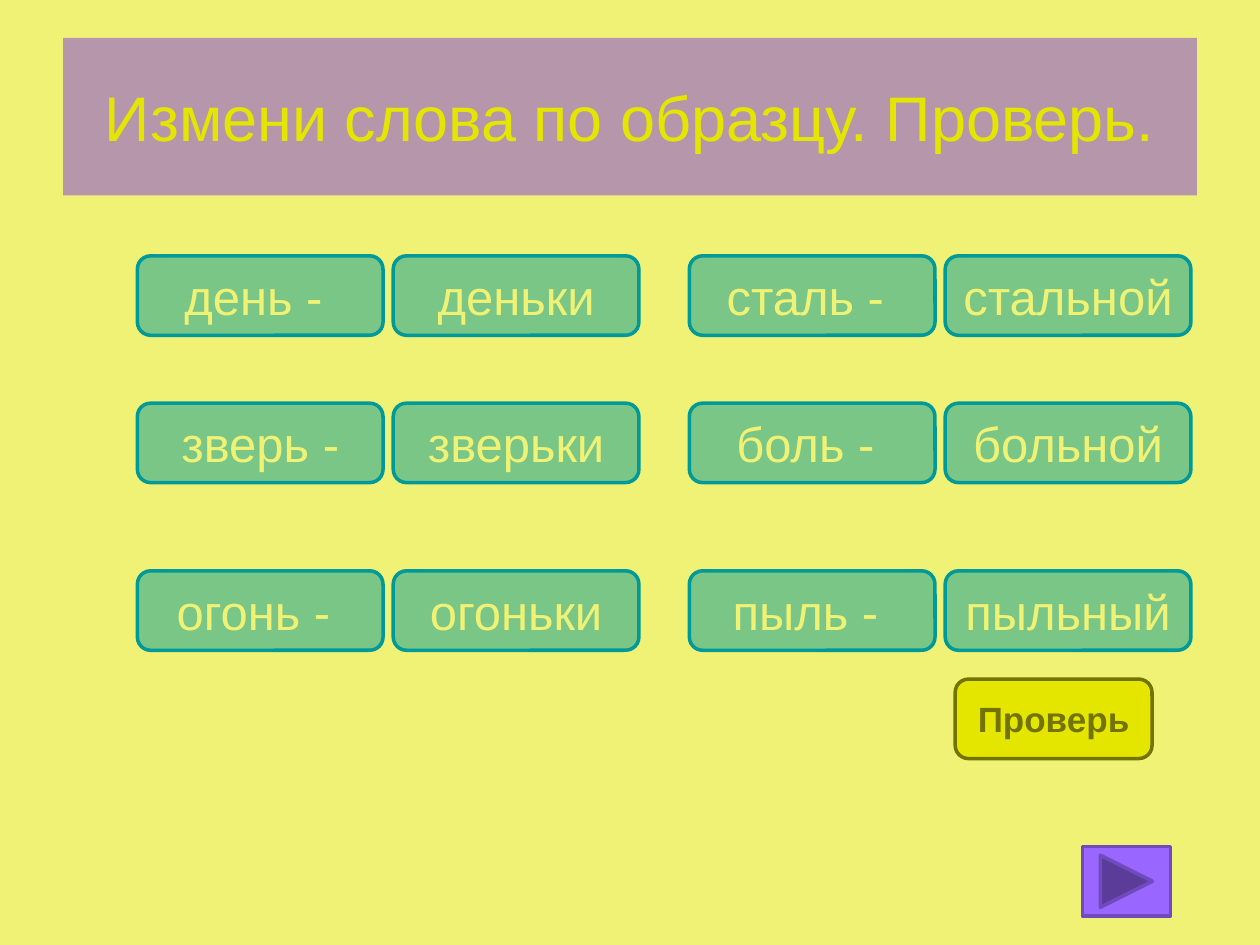
from pptx import Presentation
from pptx.dml.color import RGBColor
from pptx.enum import shapes, text
from pptx.oxml.ns import qn
from pptx.util import Pt
from lxml import etree

# Content: each row holds two pairs, word and changed word
TITLE = "Измени слова по образцу. Проверь."
CHECK = "Проверь"
ROWS = [
    ["день - ", "деньки", "сталь - ", "стальной"],
    ["зверь -", "зверьки", "боль - ", "больной"],
    ["огонь - ", "огоньки", "пыль - ", "пыльный"],
]

# Layout in points
LEFTS = [78.5 + pair * 315.4 + side * 146.2 for pair in (0, 1) for side in (0, 1)]
TOPS = [146.2, 230.4, 326.2]
CARD = (140.4, 45.4)

# Formats
HEAD = {"size": Pt(36), "name": "Arial", "bold": False}
WORD = {"size": Pt(28), "name": "Arial", "bold": False}
BUTTON = {"size": Pt(20), "name": "Arial", "bold": True}
KIND = shapes.MSO_SHAPE


def color(code):
    return RGBColor.from_string(code)


def paint(shape, code, alpha=None):
    shape.fill.solid()
    shape.fill.fore_color.rgb = color(code)
    if alpha:
        tone = shape.fill._xPr.find(qn("a:solidFill"))[0]
        etree.SubElement(tone, qn("a:alpha")).set("val", str(alpha * 1000))


def write(shape, words, style, code):
    frame = shape.text_frame
    frame.word_wrap = True
    frame.vertical_anchor = text.MSO_ANCHOR.MIDDLE
    para = frame.paragraphs[0]
    para.alignment = text.PP_ALIGN.CENTER
    run = para.add_run()
    run.text = words
    for key, value in style.items():
        setattr(run.font, key, value)
    run.font.color.rgb = color(code)


def add(slide, kind, box, fill, line, alpha=None):
    shape = slide.shapes.add_shape(kind, *map(Pt, box))
    shape.shadow.inherit = False
    paint(shape, fill, alpha)
    shape.line.color.rgb = color(line)
    shape.line.width = Pt(2)
    return shape


def main():
    deck = Presentation()
    deck.slide_width, deck.slide_height = Pt(720), Pt(540)
    slide = deck.slides.add_slide(deck.slide_layouts[5])
    slide.background.fill.solid()
    slide.background.fill.fore_color.rgb = color("EFF274")

    # Title band
    title = slide.shapes.title
    place = {"left": 36, "top": 21.6, "width": 648, "height": 90}
    for key, value in place.items():
        setattr(title, key, Pt(value))
    paint(title, "5E0DFF", 40)
    write(title, TITLE, HEAD, "E5E600")

    # Check and forward buttons
    check = add(slide, KIND.ROUNDED_RECTANGLE, (545.8, 388.1, 112.5, 45.4),
                "E5E600", "737300")
    write(check, CHECK, BUTTON, "737300")
    add(slide, KIND.ACTION_BUTTON_FORWARD_OR_NEXT, (618.5, 483.8, 50.4, 39.6),
        "9966FF", "714BBD")

    # Word cards
    for top, row in zip(TOPS, ROWS):
        for left, word in zip(LEFTS, row):
            card = add(slide, KIND.ROUNDED_RECTANGLE, (left, top, *CARD),
                       "009999", "009999", 49)
            write(card, word, WORD, "EFF274")

    deck.save("out.pptx")


if __name__ == "__main__":
    main()
